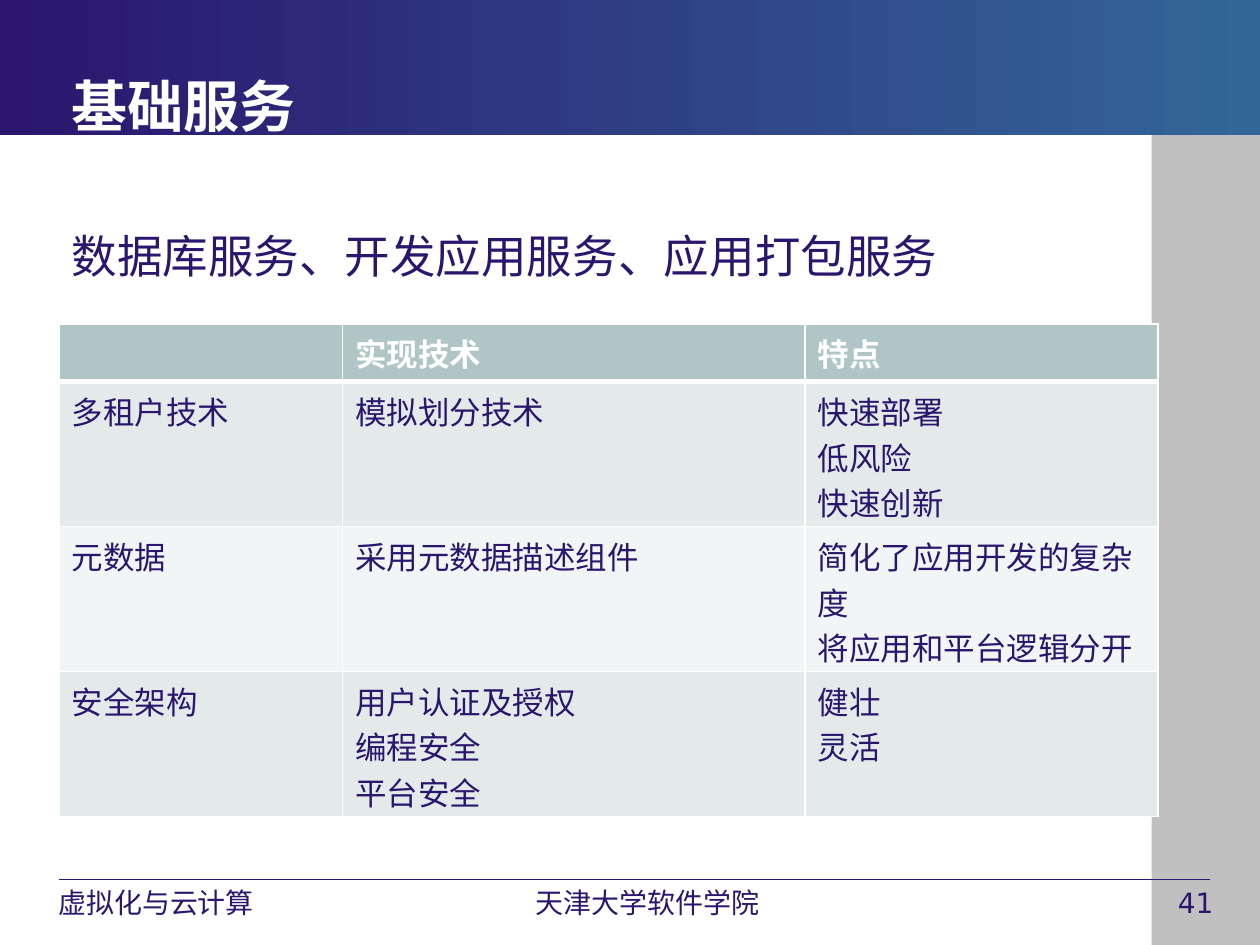
"""Build the basic services slide with its comparison table."""
from dataclasses import dataclass

from lxml.etree import SubElement
from pptx import Presentation
from pptx.dml.color import RGBColor as Rgb
from pptx.enum.shapes import MSO_CONNECTOR as Connector, MSO_SHAPE as Shape
from pptx.enum.text import MSO_ANCHOR as Anchor, PP_ALIGN as Align
from pptx.oxml import parse_xml
from pptx.oxml.ns import nsdecls, qn
from pptx.util import Inches, Pt

WIDTH, HEIGHT = Inches(10), Inches(7.5)


@dataclass(frozen=True)
class Theme:
    """Colours, fonts and type sizes of the deck."""
    ink: str = "2B166E"
    blue: str = "336699"
    grey: str = "C0C0C0"
    white: str = "FFFFFF"
    header: str = "B0C6C6"
    bands: tuple = ("E4EAEA", "F2F5F5")
    sans: str = "DejaVu Sans"
    cell_font: str = "Arial"
    title_size: int = 32
    body_size: int = 26
    cell_size: int = 18
    footer_size: int = 16


THEME = Theme()
LEFT, RULE_TOP = 4.7, 93.07
BANNER_HEIGHT = 14.27
SIDEBAR_LEFT = 91.4
COLUMNS = (22.5, 36.7, 28)
ROWS = (6.13, 15.33, 15.33, 15.33)
CELLS = (
    ("", "实现技术", "特点"),
    ("多租户技术", "模拟划分技术", "快速部署\n低风险\n快速创新"),
    ("元数据", "采用元数据描述组件", "简化了应用开发的复杂度\n将应用和平台逻辑分开"),
    ("安全架构", "用户认证及授权\n编程安全\n平台安全", "健壮\n灵活"),
)
FOOTERS = (
    ("虚拟化与云计算", 2.7, 19.4, Align.CENTER),
    ("天津大学软件学院", 40.1, 22.6, Align.CENTER),
    ("41", 92.5, 7.1, Align.LEFT),
)


def across(share):
    """Turn a percentage of the slide width into a length."""
    return round(WIDTH * share / 100)


def down(share):
    """Turn a percentage of the slide height into a length."""
    return round(HEIGHT * share / 100)


def place(left, top, width, height):
    """Turn percentages into a left, top, width, height tuple."""
    return across(left), down(top), across(width), down(height)


def style(para, size, color, name=THEME.sans, bold=False):
    """Set the font of a paragraph."""
    font = para.font
    font.size, font.name, font.bold = Pt(size), name, bold
    font.color.rgb = Rgb.from_string(color)


def add_panel(page, area, start, end=None):
    """Add a plain rectangle, filled solid or with a gradient."""
    panel = page.shapes.add_shape(Shape.RECTANGLE, *place(*area))
    panel.shadow.inherit = False
    panel.line.fill.background()
    if end is None:
        panel.fill.solid()
        panel.fill.fore_color.rgb = Rgb.from_string(start)
        return
    panel.fill.gradient()
    panel.fill.gradient_angle = 0
    for stop, color, position in zip(panel.fill.gradient_stops, (start, end), (0, 1)):
        stop.color.rgb = Rgb.from_string(color)
        stop.position = position


def add_rule(page, left, right, top):
    """Add a thin horizontal rule."""
    rule = page.shapes.add_connector(
        Connector.STRAIGHT, across(left), down(top), across(right), down(top))
    rule.line.width = Pt(0.75)
    rule.line.color.rgb = Rgb.from_string(THEME.ink)
    SubElement(rule.element.spPr, qn("a:effectLst"))


def add_text(page, area, text, size, color=THEME.ink, bold=False,
             align=Align.LEFT, anchor=Anchor.TOP):
    """Add a one-paragraph text box and return its paragraph."""
    frame = page.shapes.add_textbox(*place(*area)).text_frame
    frame.word_wrap = True
    frame.vertical_anchor = anchor
    para = frame.paragraphs[0]
    para.add_run().text = text
    para.alignment = align
    style(para, size, color, bold=bold)
    return para


def set_borders(cell, bottom):
    """Give a cell white borders, with its own bottom width in points."""
    properties = cell._tc.get_or_add_tcPr()
    for index, (side, width) in enumerate(zip("LRTB", (1, 1, 1, bottom))):
        properties.insert(index, parse_xml(
            f'<a:ln{side} {nsdecls("a")} w="{Pt(width)}"><a:solidFill>'
            f'<a:srgbClr val="{THEME.white}"/></a:solidFill></a:ln{side}>'))


def fill_cell(cell, text, is_header, fill):
    """Write and style one table cell."""
    cell.text = text
    for para in cell.text_frame.paragraphs:
        style(para, THEME.cell_size, THEME.white if is_header else THEME.ink,
              THEME.cell_font, is_header)
    cell.fill.solid()
    cell.fill.fore_color.rgb = Rgb.from_string(fill)
    set_borders(cell, 3 if is_header else 1)


def add_comparison(page, left, top):
    """Add the table of techniques and their features."""
    area = place(left, top, sum(COLUMNS), sum(ROWS))
    table = page.shapes.add_table(len(ROWS), len(COLUMNS), *area).table
    for column, share in zip(table.columns, COLUMNS):
        column.width = across(share)
    for index, (row, share, texts) in enumerate(zip(table.rows, ROWS, CELLS)):
        row.height = down(share)
        fill = THEME.bands[(index - 1) % 2] if index else THEME.header
        for cell, text in zip(row.cells, texts):
            fill_cell(cell, text, index == 0, fill)


def main():
    """Build and save the deck."""
    deck = Presentation()
    deck.slide_width, deck.slide_height = WIDTH, HEIGHT
    page = deck.slides.add_slide(deck.slide_layouts[6])

    add_panel(page, (SIDEBAR_LEFT, BANNER_HEIGHT, 100 - SIDEBAR_LEFT,
                     100 - BANNER_HEIGHT), THEME.grey)
    add_rule(page, LEFT, 96, RULE_TOP)
    add_panel(page, (0, 0, 100, BANNER_HEIGHT), THEME.ink, THEME.blue)
    for text, left, width, align in FOOTERS:
        add_text(page, (left, RULE_TOP, width, 4.67), text,
                 THEME.footer_size, align=align)

    add_text(page, (LEFT, 2.8, 90, 16.67), "基础服务", THEME.title_size,
             THEME.white, bold=True, anchor=Anchor.MIDDLE)
    add_comparison(page, LEFT, 34.27)
    body = add_text(page, (LEFT, 23.47, 85.2, 9.33),
                    "数据库服务、开发应用服务", THEME.body_size)
    body.space_before = Pt(THEME.body_size * 0.2)
    span = body.add_run()
    span.text = "、应用打包服务"
    span.font.name = THEME.cell_font
    deck.save("out.pptx")


if __name__ == "__main__":
    main()
